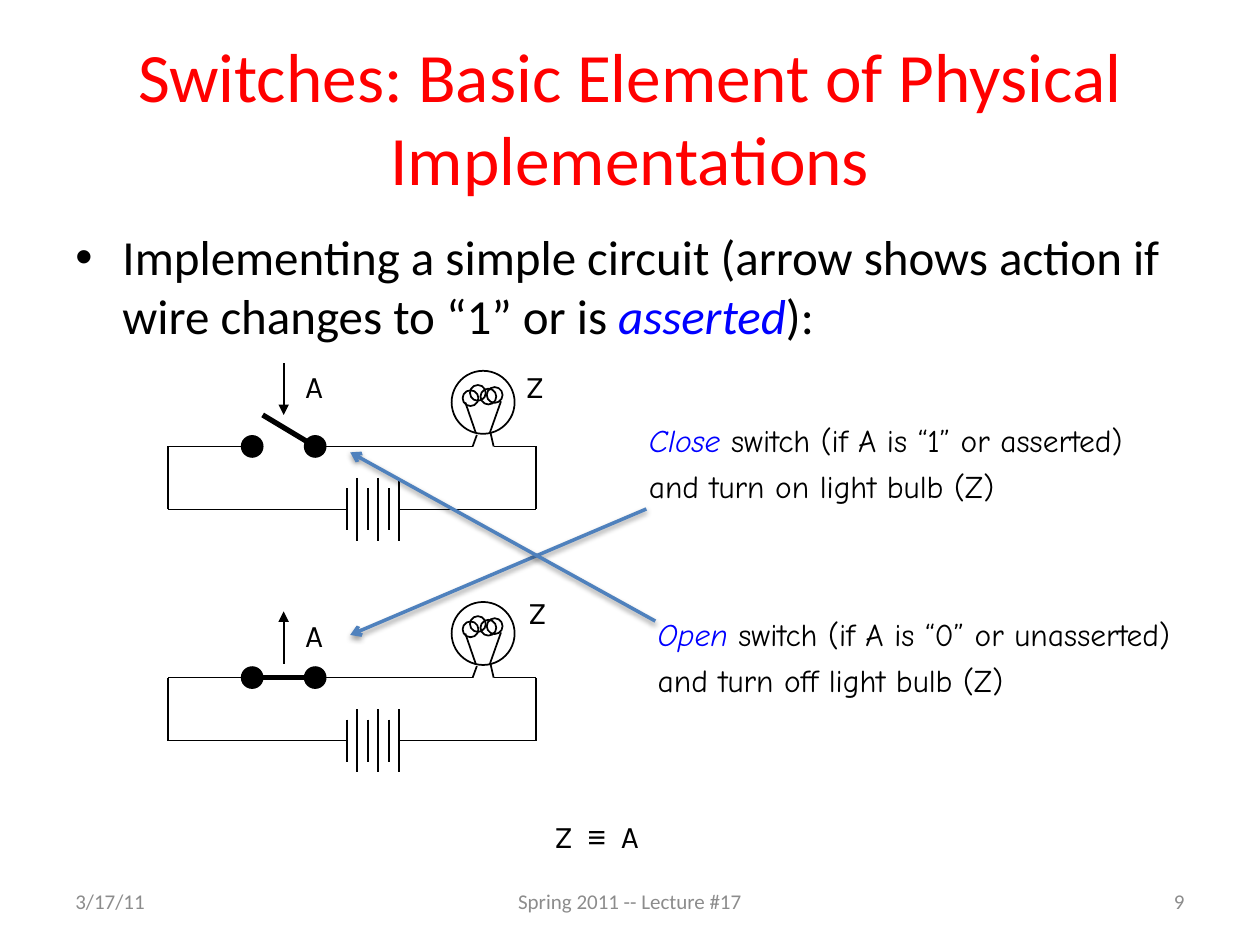
from dataclasses import dataclass
from typing import NamedTuple

import pptx
import pptx.dml.color
import pptx.enum.shapes
import pptx.enum.text
import pptx.oxml
import pptx.oxml.ns
import pptx.util

Cm, Pt = pptx.util.Cm, pptx.util.Pt
ALIGN, ANCHOR = pptx.enum.text.PP_ALIGN, pptx.enum.text.MSO_ANCHOR
NS = pptx.oxml.ns.nsdecls("a")
GRID = 2.54 / 12  # circuit drawing grid in cm


@dataclass(frozen=True)
class Theme:
    black: str = "000000"
    white: str = "FFFFFF"
    title: str = "FF0000"
    emphasis: str = "0000FF"
    footer: str = "8C8C8C"
    pointer: str = "4F81BD"
    main_font: str = "Calibri"
    label_font: str = "Karla"
    symbol_font: str = "Arial"
    note_font: str = "Comic Neue"
    title_size: float = 39.6
    body_size: float = 28
    label_size: float = 18
    footer_size: float = 12
    wire: float = 1
    lever: float = 3
    pointer_width: float = 2


T = Theme()


class Box(NamedTuple):
    left: float
    top: float
    width: float
    height: float


class Span(NamedTuple):
    text: str
    font: str
    size: float
    color: str = T.black
    italic: bool = False


class Circuit(NamedTuple):
    """Positions in cm; lever tip and arrow ends in grid units."""
    top: float
    lever_tip: tuple
    arrow_from: float
    arrow_to: float
    a_top: float
    z_left: float
    z_top: float


class Note(NamedTuple):
    box: Box
    verb: str
    lines: tuple
    arrow_from: tuple
    arrow_to: tuple


CIRCUIT_LEFT = 3.39
CIRCUITS = [
    Circuit(9, (9, -3), -7.9, -3, 7.16, 10.54, 7.16),
    Circuit(13.66, (8, 0), -1.3, -6.3, 12.19, 10.59, 11.73),
]
NOTES = [
    Note(Box(13.03, 8.26, 11.3, 2.84), "Close ",
         ("switch (if A is “1” or asserted)", "and turn on light bulb (Z)"),
         (13.03, 10.26), (7.06, 12.8)),
    Note(Box(13.21, 12.17, 11.3, 2.84), "Open ",
         ("switch (if A is “0” or unasserted)", "and turn off light bulb (Z)"),
         (13.21, 12.52), (7.06, 9.12)),
]


def rgb(color: str):
    return pptx.dml.color.RGBColor.from_string(color)


def style(r, span: Span) -> None:
    r.font.name, r.font.size = span.font, Pt(span.size)
    r.font.color.rgb = rgb(span.color)
    r.font.italic = span.italic


def add_span(p, span: Span) -> None:
    r = p.add_run()
    r.text = span.text
    style(r, span)


def add_text(shapes, box: Box, spans: list, align=ALIGN.LEFT, anchor=ANCHOR.TOP, wrap=True):
    tf = shapes.add_textbox(*map(Cm, box)).text_frame
    tf.word_wrap, tf.vertical_anchor = wrap, anchor
    p = tf.paragraphs[0]
    p.alignment = align
    for span in spans:
        add_span(p, span)
    return tf


def add_label(shapes, box: Box, spans: list, before: float = 0, tight: bool = True):
    tf = add_text(shapes, box, spans, wrap=False)
    p = tf.paragraphs[0]
    p.line_spacing, p.space_before = Pt(26), Pt(before)
    if tight:
        tf.margin_left = tf.margin_right = Cm(0.05)
        tf.margin_top = tf.margin_bottom = Cm(0.08)
    return p


def add_line(shapes, start: tuple, end: tuple, width: float = T.wire,
             color: str = T.black, head: str = "", shadow: bool = False) -> None:
    s = shapes.add_connector(pptx.enum.shapes.MSO_CONNECTOR.STRAIGHT, *map(Cm, start + end))
    s.line.color.rgb, s.line.width = rgb(color), Pt(width)
    if head:
        s.line._get_or_add_ln().append(pptx.oxml.parse_xml(f'<a:tailEnd {NS} type="{head}"/>'))
    effect = ('<a:outerShdw blurRad="40000" dist="20000" dir="5400000" rotWithShape="0">'
              f'<a:srgbClr val="{T.black}"><a:alpha val="38000"/></a:srgbClr></a:outerShdw>')
    s._element.spPr.append(pptx.oxml.parse_xml(
        f'<a:effectLst {NS}>{effect if shadow else ""}</a:effectLst>'))


def draw_circuit(shapes, c: Circuit) -> None:
    def at(x: float, y: float) -> tuple:
        return CIRCUIT_LEFT + x * GRID, c.top + y * GRID

    def wires(target, *points: tuple) -> None:
        for start, end in zip(points, points[1:]):
            add_line(target, at(*start), at(*end))

    def circle(target, x: float, y: float, size: float, fill: str = "") -> None:
        """Draw a circle centred on a grid point."""
        d = Cm(size * GRID)
        s = target.add_shape(pptx.enum.shapes.MSO_SHAPE.OVAL,
                             *map(Cm, at(x - size / 2, y - size / 2)), d, d)
        s.shadow.inherit = False
        s.line.color.rgb, s.line.width = rgb(T.black), Pt(T.wire)
        if fill:
            s.fill.solid()
            s.fill.fore_color.rgb = rgb(fill)
        else:
            s.fill.background()

    for text, left, top in (("A", 6.1, c.a_top), ("Z", c.z_left, c.z_top)):
        add_label(shapes, Box(left, top, 1.52, 1.24), [Span(text, T.label_font, T.label_size)])
    add_line(shapes, at(11, c.arrow_from), at(11, c.arrow_to), head="triangle")
    wires(shapes, (14, 0), (25, 0))
    wires(shapes, (35, 0), (35, 6), (22, 6))
    wires(shapes, (17, 6), (0, 6), (0, 0), (8, 0))

    lamp = shapes.add_group_shape().shapes
    circle(lamp, 30, -4.2, 6, T.white)
    for x, y in ((28.8, -4.6), (30.5, -4.75), (31.1, -4.9), (29.5, -5.1)):
        circle(lamp, x, y, 1.5)
    wires(lamp, (28.3, -4.2), (29.3, -1.3))
    wires(lamp, (31.7, -4.3), (30.6, -1.2))
    wires(lamp, (29.4, -1.1), (29, 0), (25, 0))
    wires(lamp, (30.7, -1.3), (31, 0), (35, 0))

    switch = shapes.add_group_shape().shapes
    add_line(switch, at(14, 0), at(*c.lever_tip), T.lever)
    for x in (14, 8):
        circle(switch, x, 0, 2, T.black)

    battery = shapes.add_group_shape().shapes
    for x in range(17, 23):
        half = 2 if x % 2 else 3
        wires(battery, (x, 6 - half), (x, 6 + half))


def draw_note(shapes, note: Note) -> None:
    group = shapes.add_group_shape().shapes
    p = add_label(group, note.box,
                  [Span(note.verb, T.note_font, T.label_size, T.emphasis, True)], before=11)
    for i, line in enumerate(note.lines):
        if i:
            p.add_line_break()
        add_span(p, Span(line, T.note_font, T.label_size))
    add_line(group, note.arrow_from, note.arrow_to, T.pointer_width, T.pointer, "arrow", True)


def draw_title(title) -> None:
    title.left, title.top, title.width, title.height = map(Cm, Box(1.27, 0.76, 22.86, 3.18))
    tf = title.text_frame
    tf.text = "Switches: Basic Element of Physical Implementations"
    tf.vertical_anchor = ANCHOR.MIDDLE
    p = tf.paragraphs[0]
    p.alignment = ALIGN.CENTER
    style(p.runs[0], Span("", T.main_font, T.title_size, T.title))


def draw_bullet(shapes) -> None:
    tf = add_text(shapes, Box(1.27, 4.45, 22.86, 2.62), [
        Span("Implementing a simple circuit (arrow shows action if wire changes to “1” or is ",
             T.main_font, T.body_size),
        Span("asserted", T.main_font, T.body_size, T.emphasis, True),
        Span("):", T.main_font, T.body_size)])
    p = tf.paragraphs[0]
    p.space_before = Pt(0.2 * T.body_size)
    pPr = p._p.get_or_add_pPr()
    pPr.set("marL", str(Cm(0.95)))
    pPr.set("indent", str(-Cm(0.95)))
    for xml in (f'<a:buFont {NS} typeface="Arial"/>', f'<a:buChar {NS} char="•"/>'):
        pPr.append(pptx.oxml.parse_xml(xml))


def main() -> None:
    prs = pptx.Presentation()
    prs.slide_width, prs.slide_height = Cm(25.4), Cm(19.05)
    slide = prs.slides.add_slide(prs.slide_layouts[5])
    shapes = slide.shapes
    draw_title(shapes.title)
    draw_bullet(shapes)
    for circuit in CIRCUITS:
        draw_circuit(shapes, circuit)
    add_label(shapes, Box(10.92, 16.2, 2.39, 1.17),
              [Span("Z  ", T.label_font, T.label_size), Span("≡", T.symbol_font, T.label_size),
               Span("  A", T.label_font, T.label_size)], before=11, tight=False)
    for note in NOTES:
        draw_note(shapes, note)
    for text, left, width, align in (("3/17/11", 1.27, 5.93, ALIGN.LEFT),
                                     ("Spring 2011 -- Lecture #17", 8.68, 8.04, ALIGN.CENTER),
                                     ("9", 18.2, 5.93, ALIGN.RIGHT)):
        add_text(shapes, Box(left, 17.66, width, 1.01),
                 [Span(text, T.main_font, T.footer_size, T.footer)], align, ANCHOR.MIDDLE)
    prs.save("out.pptx")


if __name__ == "__main__":
    main()
